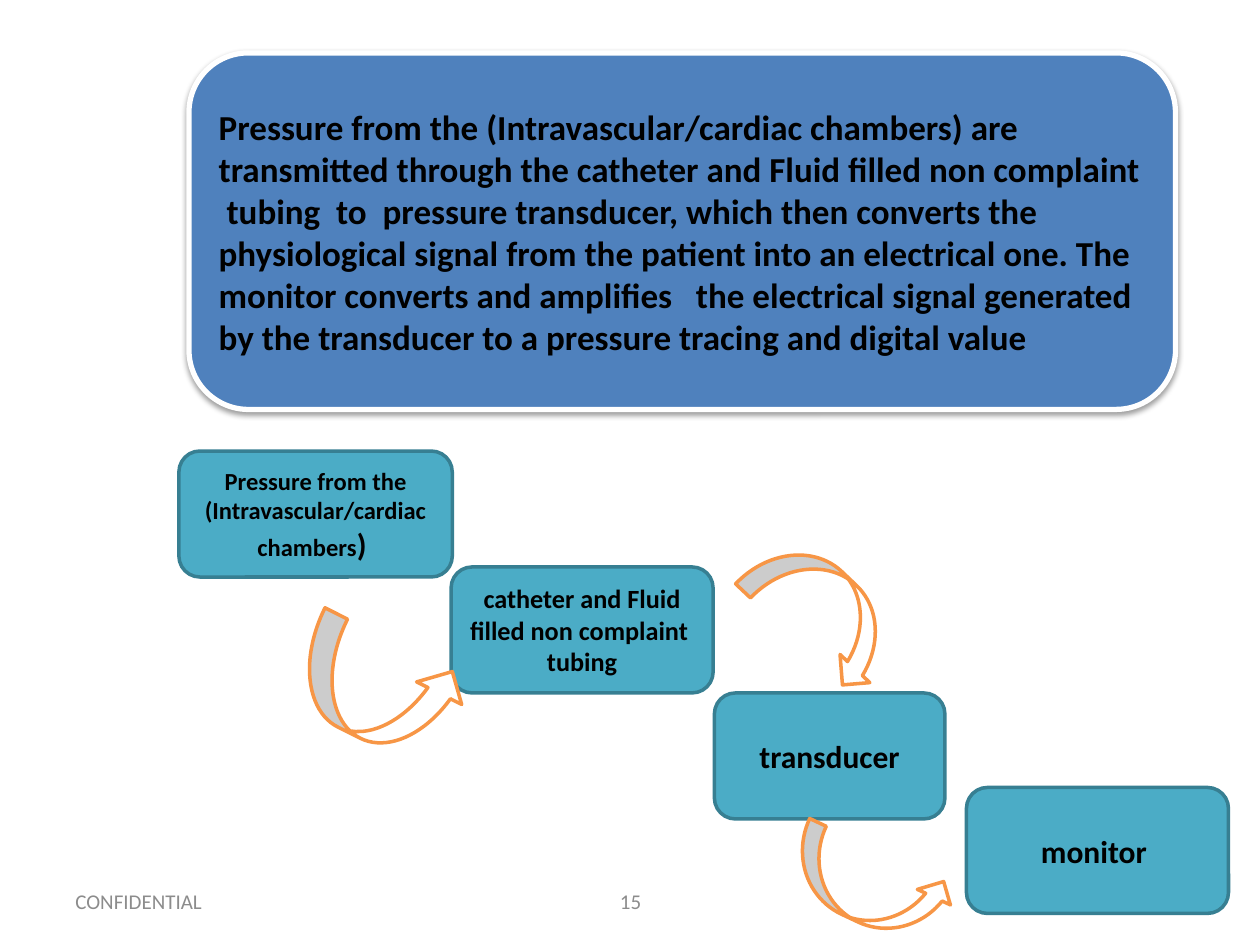
from lxml.etree import SubElement
from pptx import Presentation
from pptx.dml.color import RGBColor
from pptx.enum.shapes import MSO_SHAPE
from pptx.enum.text import MSO_ANCHOR, PP_ALIGN
from pptx.oxml.ns import qn
from pptx.util import Inches, Pt

BLACK = RGBColor(0x00, 0x00, 0x00)
WHITE = RGBColor(0xFF, 0xFF, 0xFF)
GREY = RGBColor(0x8C, 0x8C, 0x8C)
BLUE = RGBColor(0x4F, 0x81, 0xBD)
TEAL = RGBColor(0x4B, 0xAC, 0xC6)
DARK_TEAL = RGBColor(0x37, 0x7F, 0x92)
ORANGE = RGBColor(0xF7, 0x96, 0x46)

SUMMARY = (
    "Pressure from the (Intravascular/cardiac chambers) are transmitted "
    "through the catheter and Fluid filled non complaint  tubing  to  "
    "pressure transducer, which then converts the physiological signal from "
    "the patient into an electrical one. The monitor converts and amplifies   "
    "the electrical signal generated by the transducer to a pressure tracing "
    "and digital value"
)
STEPS = [
    ((1.42, 3.58, 2.17, 1),
     [("Pressure from the (Intravascular/cardiac chambers", 14), (") ", 18)]),
    ((7.67, 6.25, 2.08, 1), [("monitor ", 18)]),
    ((3.58, 4.5, 2.08, 1),
     [("catheter and Fluid filled non complaint  tubing", 15)]),
    ((5.67, 5.5, 1.83, 1), [("transducer", 18)]),
]
ARROWS = [
    (MSO_SHAPE.CURVED_UP_ARROW, (6.24, 6.75, 1.32, 0.58), 25.2),
    (MSO_SHAPE.CURVED_UP_ARROW, (2.33, 5.08, 1.33, 0.8), 26.6),
    (MSO_SHAPE.CURVED_LEFT_ARROW, (6.22, 4.19, 0.65, 1.33), 313.4),
]
FOOTERS = [
    ((0.5, 6.95, 2.33, 0.4), "CONFIDENTIAL", PP_ALIGN.LEFT),
    ((3.42, 6.95, 3.17, 0.4), "15", PP_ALIGN.CENTER),
]


def write(sp, runs, color, align, bold):
    tf = sp.text_frame
    tf.word_wrap = True
    tf.vertical_anchor = MSO_ANCHOR.MIDDLE
    p = tf.paragraphs[0]
    p.alignment = align
    for text, size in runs:
        r = p.add_run()
        r.text = text
        r.font.color.rgb = color
        formats = {"name": "Calibri", "size": Pt(size), "bold": bold}
        for name, value in formats.items():
            setattr(r.font, name, value)


def add_footer(s, box, text, align):
    sp = s.shapes.add_textbox(*map(Inches, box))
    write(sp, [(text, 12)], GREY, align, False)


def add_figure(s, kind, box, fill, line, width):
    sp = s.shapes.add_shape(kind, *map(Inches, box))
    sp.shadow.inherit = False
    sp.fill.solid()
    sp.fill.fore_color.rgb = fill
    sp.line.color.rgb = line
    sp.line.width = Pt(width)
    return sp


def add_card(s, box, runs, fill, line, width, align):
    sp = add_figure(s, MSO_SHAPE.ROUNDED_RECTANGLE, box, fill, line, width)
    write(sp, runs, BLACK, align, True)
    return sp


def add_shadow(sp):
    effects = sp.element.spPr.find(qn("a:effectLst"))
    shadow = SubElement(effects, qn("a:outerShdw"), blurRad=str(Pt(3.1)),
                        dist=str(Pt(1.6)), dir="5400000", rotWithShape="0")
    color = SubElement(shadow, qn("a:srgbClr"), val=str(BLACK))
    SubElement(color, qn("a:alpha"), val="38000")


def add_arrow(s, kind, box, rotation):
    sp = add_figure(s, kind, box, WHITE, ORANGE, 2)
    sp.rotation = rotation


def main():
    prs = Presentation()
    prs.slide_width, prs.slide_height = Inches(10), Inches(7.5)
    s = prs.slides.add_slide(prs.slide_layouts[6])
    for box, text, align in FOOTERS:
        add_footer(s, box, text, align)
    summary = add_card(s, (1.5, 0.42, 7.83, 2.83), [(SUMMARY, 20)],
                       BLUE, WHITE, 3, PP_ALIGN.LEFT)
    add_shadow(summary)
    for box, runs in STEPS:
        add_card(s, box, runs, TEAL, DARK_TEAL, 2, PP_ALIGN.CENTER)
    for kind, box, rotation in ARROWS:
        add_arrow(s, kind, box, rotation)
    prs.save("out.pptx")


if __name__ == "__main__":
    main()
